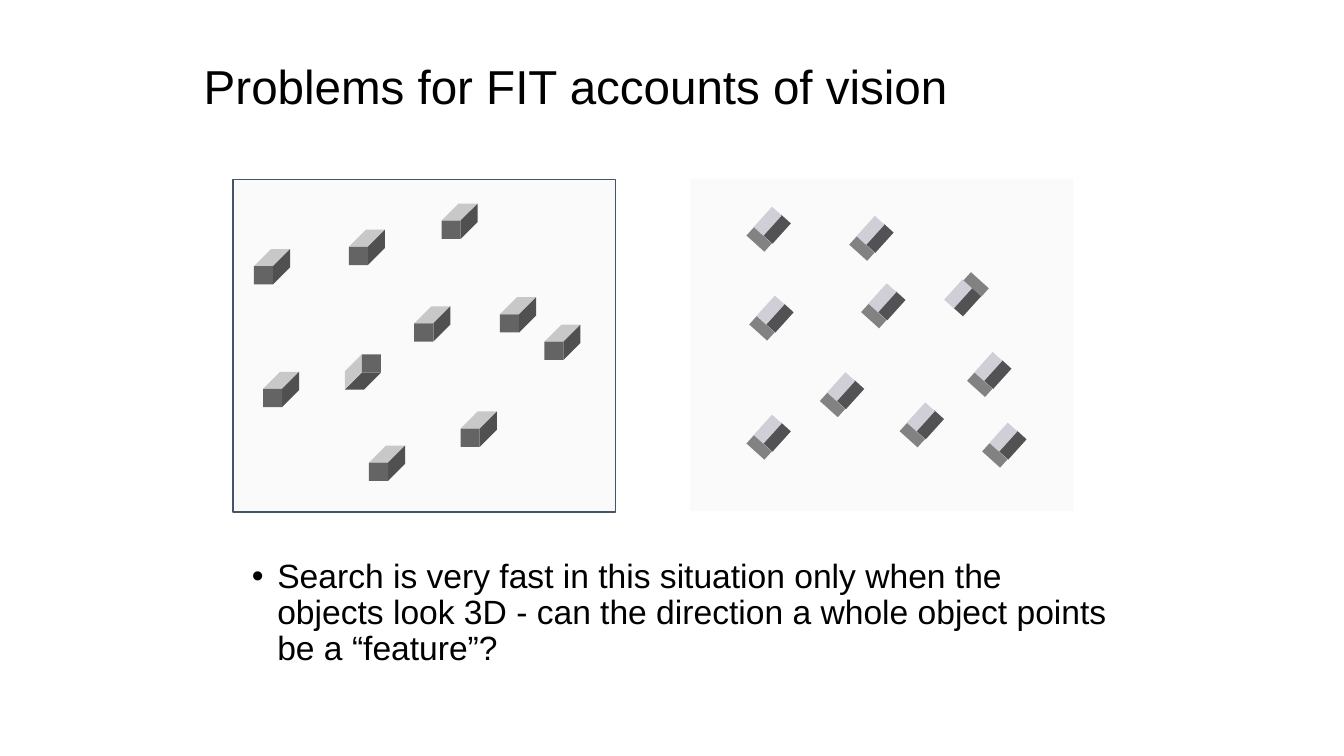
from pptx import Presentation
from pptx.dml.color import RGBColor
from pptx.enum import shapes, text
from pptx.oxml import parse_xml
from pptx.oxml.ns import nsdecls
from pptx.util import Cm, Pt

COLORS = {
    "text": "000000", "panel": "FAFAFA", "border": "44546A",
    "cube_front": "646464", "cube_light": "C8C8C8", "cube_dark": "505050",
    "block_dark": "525154", "block_light": "D0CED7", "block_end": "828282",
}

# Top left corner of each cube's front face, in cm
CUBES = [(10.44, 8.15), (12.6, 7.92), (6.63, 9.8), (8.79, 6.22), (13.72, 8.61),
         (9.3, 11.66), (11.61, 10.8), (6.4, 6.71), (11.13, 5.56)]
ODD_CUBE = (9.12, 8.93)
FACE_W, FACE_H, DEPTH = 0.48, 0.46, 0.43

# Top left corner of each block's dark bar before rotation, in cm
BLOCKS = [(19.3, 7.85), (25.17, 11.05), (21.08, 9.78), (23.09, 10.54), (21.82, 5.84),
          (19.23, 5.61), (24.79, 9.27), (19.23, 10.85), (22.12, 7.54)]
ODD_BLOCK = (24.03, 7.44)
BLOCK_ANGLE = 132.1


def rgb(name):
    return RGBColor.from_string(COLORS[name])


def paint(sp, fill, line=None):
    sp.shadow.inherit = False
    sp.fill.solid()
    sp.fill.fore_color.rgb = rgb(fill)
    if line:
        sp.line.color.rgb = rgb(line)
        sp.line.width = Pt(1)
    else:
        sp.line.fill.background()


def add_rect(parent, x, y, w, h, fill, line=None, angle=0):
    sp = parent.add_shape(shapes.MSO_SHAPE.RECTANGLE, Cm(x), Cm(y), Cm(w), Cm(h))
    sp.rotation = angle
    paint(sp, fill, line)


def add_polygon(parent, points, fill):
    corners = [(Cm(x), Cm(y)) for x, y in points]
    builder = parent.build_freeform(*corners[0])
    builder.add_line_segments(corners[1:])
    paint(builder.convert_to_shape(), fill)


def add_cube(s, x, y, odd=False):
    """Draw a cube receding up and right, or down and left when odd."""
    right, bottom = x + FACE_W, y + FACE_H
    d = -DEPTH if odd else DEPTH
    edge_y, edge_x = (bottom, x) if odd else (y, right)
    level, upright = ("cube_dark", "cube_light") if odd else ("cube_light", "cube_dark")
    group = s.shapes.add_group_shape().shapes
    add_polygon(group, [(x, edge_y), (right, edge_y),
                        (right + d, edge_y - d), (x + d, edge_y - d)], level)
    add_polygon(group, [(edge_x, y), (edge_x, bottom),
                        (edge_x + d, bottom - d), (edge_x + d, y - d)], upright)
    add_rect(group, x, y, FACE_W, FACE_H, "cube_front")


def add_block(s, x, y, odd=False):
    """Draw two slanted bars with an end cap, at the far end when odd."""
    end_x, end_y = (0.43, -0.58) if odd else (-0.24, 0.12)
    group = s.shapes.add_group_shape().shapes
    add_rect(group, x, y, 0.69, 0.33, "block_dark", angle=BLOCK_ANGLE)
    add_rect(group, x - 0.23, y - 0.2, 0.69, 0.33, "block_light", angle=BLOCK_ANGLE)
    add_rect(group, x + end_x, y + end_y, 0.28, 0.61, "block_end", angle=BLOCK_ANGLE)


def write(sp, words, size, anchor):
    tf = sp.text_frame
    tf.text = words
    tf.word_wrap = True
    tf.auto_size = text.MSO_AUTO_SIZE.NONE
    tf.vertical_anchor = anchor
    p = tf.paragraphs[0]
    p.alignment = text.PP_ALIGN.LEFT
    p.line_spacing = 0.9
    font = p.runs[0].font
    font.name, font.size = "Arial", Pt(size)
    font.color.rgb = rgb("text")
    return p


def add_title(s, words):
    sp = s.shapes.title
    sp.left, sp.top, sp.width, sp.height = Cm(4.88), Cm(0.43), Cm(24.13), Cm(3.61)
    write(sp, words, 34, text.MSO_ANCHOR.MIDDLE)


def add_bullet(s, words):
    sp = s.shapes.add_textbox(Cm(6.1), Cm(13.97), Cm(22.23), Cm(4.34))
    p = write(sp, words, 24, text.MSO_ANCHOR.TOP)
    p.space_before = Pt(10)
    pPr = p._p.get_or_add_pPr()
    pPr.set("marL", str(Cm(0.64)))
    pPr.set("indent", str(-Cm(0.64)))
    pPr.append(parse_xml(f'<a:buFont {nsdecls("a")} typeface="Arial"/>'))
    pPr.append(parse_xml(f'<a:buChar {nsdecls("a")} char="•"/>'))


def main():
    prs = Presentation()
    prs.slide_width, prs.slide_height = Cm(33.87), Cm(19.05)
    s = prs.slides.add_slide(prs.slide_layouts[5])
    add_title(s, "Problems for FIT accounts of vision")
    add_bullet(s, "Search is very fast in this situation only when the objects look 3D"
                  " - can the direction a whole object points be a “feature”?")
    add_rect(s.shapes, 5.87, 4.52, 9.65, 8.38, "panel", "border")
    for x, y in CUBES:
        add_cube(s, x, y)
    add_cube(s, *ODD_CUBE, odd=True)
    add_rect(s.shapes, 17.4, 4.5, 9.65, 8.38, "panel")
    for x, y in BLOCKS:
        add_block(s, x, y)
    add_block(s, *ODD_BLOCK, odd=True)
    prs.save("out.pptx")


if __name__ == "__main__":
    main()
